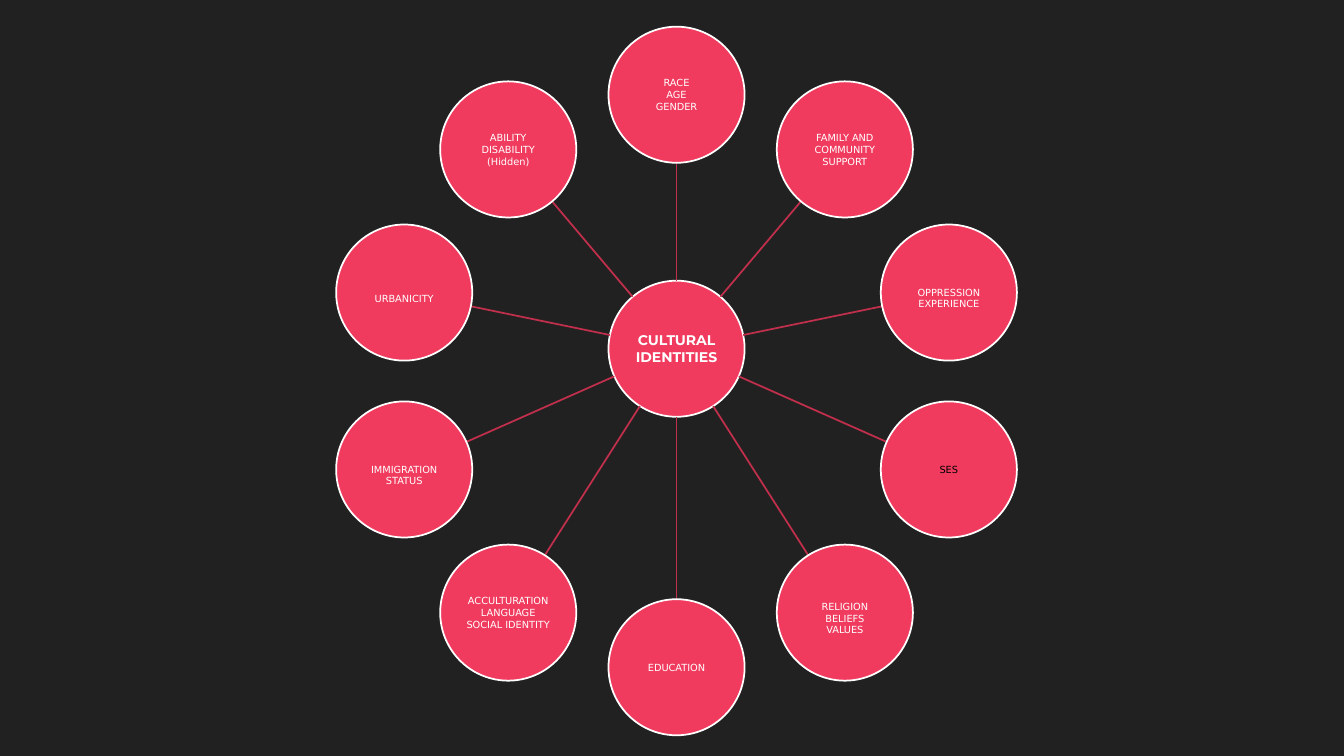
from dataclasses import dataclass
from math import cos, hypot, pi, sin
from lxml.etree import SubElement
from pptx import Presentation
from pptx.dml.color import RGBColor
from pptx.enum.shapes import MSO_CONNECTOR, MSO_SHAPE
from pptx.enum.text import MSO_ANCHOR, PP_ALIGN
from pptx.oxml.ns import qn
from pptx.util import Inches, Pt

HUB = "CULTURAL IDENTITIES"
NODES = [
    {"lines": ["RACE", "AGE", "GENDER"]},
    {"lines": ["FAMILY AND COMMUNITY SUPPORT"]},
    {"lines": ["OPPRESSION EXPERIENCE"], "low": True},
    {"lines": ["SES"], "dark": True},
    {"lines": ["RELIGION", "BELIEFS", "VALUES"], "low": True},
    {"lines": ["EDUCATION"]},
    {"lines": ["ACCULTURATION", "LANGUAGE", "SOCIAL IDENTITY"]},
    {"lines": ["IMMIGRATION", "STATUS"], "low": True},
    {"lines": ["URBANICITY"], "low": True},
    {"lines": ["ABILITY", "DISABILITY", "(Hidden)"]},
]


@dataclass
class Theme:
    back = RGBColor(0x21, 0x21, 0x21)
    disc = RGBColor(0xF0, 0x3B, 0x5E)
    spoke = RGBColor(0xC0, 0x2F, 0x4B)
    light = RGBColor(0xFF, 0xFF, 0xFF)
    dark = RGBColor(0, 0, 0)
    head = ("Montserrat", Pt(10), True)
    body = ("DejaVu Sans", Pt(7), False)
    rule = Pt(1.25)


MID_X, HUB_Y, RING_Y = 6.71, 3.46, 3.78
SIZE, REACH, DROP = 1.35, 2.84, 0.11


def add_disc(slide, x, y, lines, face, color, inset=0, drop=0):
    """Draw one labelled circle centred on x, y."""
    disc = slide.shapes.add_shape(
        MSO_SHAPE.OVAL, Inches(x - SIZE / 2), Inches(y - SIZE / 2),
        Inches(SIZE), Inches(SIZE))
    disc.shadow.inherit = False
    disc.fill.solid()
    disc.fill.fore_color.rgb = Theme.disc
    disc.line.color.rgb = Theme.light
    disc.line.width = Theme.rule
    frame = disc.text_frame
    frame.word_wrap = True
    frame.vertical_anchor = MSO_ANCHOR.MIDDLE
    frame.margin_left = frame.margin_right = frame.margin_bottom = Inches(inset)
    frame.margin_top = Inches(inset + drop)
    for i, line in enumerate(lines):
        para = frame.paragraphs[0] if i == 0 else frame.add_paragraph()
        para.alignment = PP_ALIGN.CENTER
        run = para.add_run()
        run.text = line
        run.font.name, run.font.size, run.font.bold = face
        run.font.color.rgb = color


def add_spoke(slide, x, y):
    """Draw a line from the hub's rim to the rim of the circle at x, y."""
    gap_x, gap_y = x - MID_X, y - HUB_Y
    part = SIZE / 2 / hypot(gap_x, gap_y)
    off_x, off_y = gap_x * part, gap_y * part
    spoke = slide.shapes.add_connector(
        MSO_CONNECTOR.STRAIGHT,
        Inches(MID_X + off_x), Inches(HUB_Y + off_y),
        Inches(x - off_x), Inches(y - off_y))
    spoke.line.color.rgb = Theme.spoke
    spoke.line.width = Theme.rule
    SubElement(spoke.element.spPr, qn("a:effectLst"))


def main():
    """Build the hub and its ring of identities."""
    deck = Presentation()
    deck.slide_width, deck.slide_height = Inches(13.33), Inches(7.5)
    slide = deck.slides.add_slide(deck.slide_layouts[6])
    slide.background.fill.solid()
    slide.background.fill.fore_color.rgb = Theme.back
    add_disc(slide, MID_X, HUB_Y, [HUB], Theme.head, Theme.light, inset=0.01)
    for i, node in enumerate(NODES):
        turn = 2 * pi * i / len(NODES)
        x, y = MID_X + REACH * sin(turn), RING_Y - REACH * cos(turn)
        add_spoke(slide, x, y)
        add_disc(slide, x, y, node["lines"], Theme.body,
                 Theme.dark if node.get("dark") else Theme.light,
                 drop=DROP if node.get("low") else 0)
    deck.save("out.pptx")


if __name__ == "__main__":
    main()
